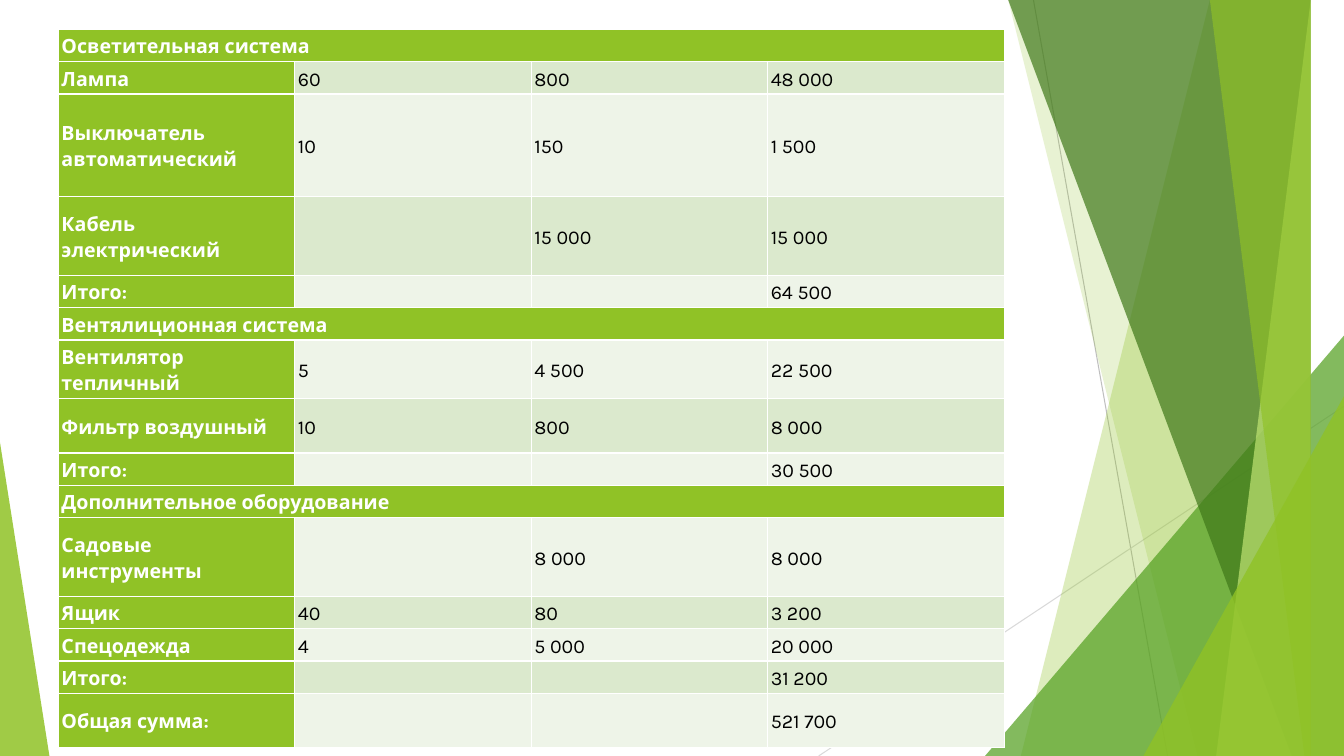
"""Build a slide with a greenhouse equipment cost table and green facets."""
from pptx import Presentation
from pptx.dml.color import RGBColor
from pptx.enum.shapes import MSO_CONNECTOR, MSO_SHAPE
from pptx.enum.text import MSO_ANCHOR
from pptx.oxml.ns import qn
from pptx.util import Inches, Pt
from lxml.etree import SubElement


def rgb(color):
    return RGBColor.from_string(color)


def paint(sp, color, opacity):
    sp.shadow.inherit = False
    sp.line.fill.background()
    sp.fill.solid()
    sp.fill.fore_color.rgb = rgb(color)
    clr = sp.fill._xPr.find(qn("a:solidFill"))[0]
    SubElement(clr, qn("a:alpha")).set("val", str(opacity * 1000))


prs = Presentation()
prs.slide_width, prs.slide_height = Inches(13.33), Inches(7.5)
s = prs.slides.add_slide(prs.slide_layouts[6])

for x1, y1, x2, y2, color in [(10.25, 0, 11.58, 7.5, "BFBFBF"),
                              (13.33, 4.03, 8.12, 7.5, "D9D9D9")]:
    ln = s.shapes.add_connector(MSO_CONNECTOR.STRAIGHT, Inches(x1), Inches(y1),
                                Inches(x2), Inches(y2))
    ln.line.color.rgb = rgb(color)
    ln.line.width = Pt(0.75)
    SubElement(ln._element.spPr, qn("a:effectLst"))

# top-left x, bottom-left x; or left, top, width, height, corner
facets = [
    ((12.28, 10.04), "90C226", 30),
    ((10.5, 11.83), "90C226", 20),
    ((9.77, 3.33, 3.56, 4.17, 1), "54A021", 72),
    ((10.21, 12.91), "3F7819", 70),
    ((13.03, 11.92), "C0E474", 70),
    ((11.96, 13.18), "90C226", 65),
    ((11.34, 3.93, 1.99, 3.57, 1), "90C226", 80),
    ((0, 4.39, 0.49, 3.11, 0), "90C226", 85),
]
for geometry, color, opacity in facets:
    if len(geometry) == 2:
        top_x, bottom_x = geometry
        fb = s.shapes.build_freeform(top_x, -0.01, scale=Inches(1))
        fb.add_line_segments([(13.33, -0.01), (13.33, 7.5), (bottom_x, 7.5)])
        sp = fb.convert_to_shape()
    else:
        *box, corner = geometry
        sp = s.shapes.add_shape(MSO_SHAPE.ISOSCELES_TRIANGLE, *map(Inches, box))
        sp.adjustments[0] = corner
    paint(sp, color, opacity)

rows = [
    (0.3, "Осветительная система"),
    (0.3, "Лампа", "60", "800", "48 000"),
    (1.02, "Выключатель автоматический", "10", "150", "1 500"),
    (0.78, "Кабель электрический", "", "15 000", "15 000"),
    (0.3, "Итого:", "", "", "64 500"),
    (0.3, "Вентялиционная система"),
    (0.54, "Вентилятор тепличный", "5", "4 500", "22 500"),
    (0.54, "Фильтр воздушный", "10", "800", "8 000"),
    (0.3, "Итого:", "", "", "30 500"),
    (0.3, "Дополнительное оборудование"),
    (0.78, "Садовые инструменты", "", "8 000", "8 000"),
    (0.3, "Ящик", "40", "80", "3 200"),
    (0.3, "Спецодежда", "4", "5 000", "20 000"),
    (0.3, "Итого:", "", "", "31 200"),
    (0.54, "Общая сумма:", "", "", "521 700"),
]
tbl = s.shapes.add_table(len(rows), 4, Inches(0.58), Inches(0.29),
                         Inches(9.38), Inches(6.91)).table
tbl.first_col = True
for i, (height, *texts) in enumerate(rows):
    tbl.rows[i].height = Inches(height)
    if len(texts) == 1:
        tbl.cell(i, 0).merge(tbl.cell(i, 3))
    for j in range(4):
        cell = tbl.cell(i, j)
        label = j == 0 or len(texts) == 1
        cell.fill.solid()
        cell.fill.fore_color.rgb = rgb("90C226" if label else "DBE9CD" if i % 2 else "EEF4E8")
        cell.vertical_anchor = MSO_ANCHOR.MIDDLE
        cell.margin_left = cell.margin_right = Inches(0.03)
        cell.margin_top = cell.margin_bottom = Inches(0.03)
        p = cell.text_frame.paragraphs[0]
        p.font.name, p.font.size, p.font.bold = "Karla", Pt(14), label
        p.font.color.rgb = rgb("FFFFFF" if label else "000000")
        if j < len(texts) and texts[j]:
            p.text = texts[j]
            p.line_spacing = 1.15
            p.space_after = Pt(9)

prs.save("out.pptx")
